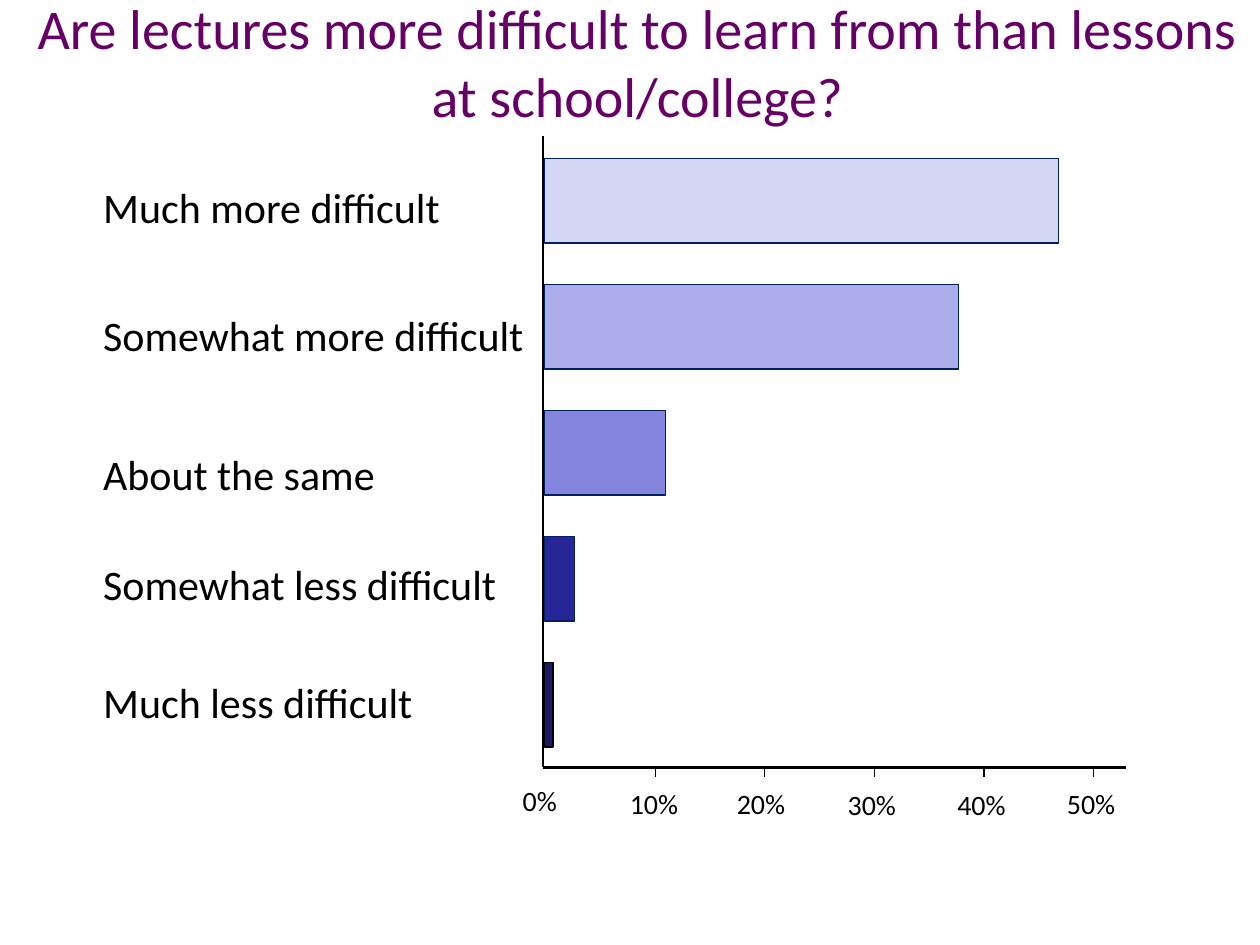
"""Build a slide with a horizontal bar diagram of survey answers on lecture difficulty."""
from dataclasses import dataclass

from lxml.etree import SubElement
from pptx import Presentation
from pptx.dml.color import RGBColor
from pptx.enum.shapes import MSO_CONNECTOR, MSO_SHAPE
from pptx.enum.text import MSO_ANCHOR, PP_ALIGN
from pptx.oxml.ns import qn
from pptx.util import Inches, Pt


@dataclass(frozen=True)
class Theme:
    font: str = "Calibri"
    title_color: str = "660066"
    ink: str = "000000"
    bar_line: str = "002060"
    title_size: int = 32
    label_size: int = 24
    tick_size: int = 16
    axis_width: float = 1.5
    thin_width: float = 0.75


theme = Theme()


def add_text(text, left, top, width, height, size, color=theme.ink,
             align=PP_ALIGN.LEFT, anchor=MSO_ANCHOR.TOP):
    box = slide.shapes.add_textbox(Inches(left), Inches(top), Inches(width), Inches(height))
    frame = box.text_frame
    frame.word_wrap = True
    frame.vertical_anchor = anchor
    paragraph = frame.paragraphs[0]
    paragraph.text = text
    paragraph.alignment = align
    paragraph.font.name = theme.font
    paragraph.font.size = Pt(size)
    paragraph.font.color.rgb = RGBColor.from_string(color)


def add_line(start_x, start_y, end_x, end_y, width):
    line = slide.shapes.add_connector(MSO_CONNECTOR.STRAIGHT, Inches(start_x), Inches(start_y),
                                      Inches(end_x), Inches(end_y))
    line.line.color.rgb = RGBColor.from_string(theme.ink)
    line.line.width = Pt(width)
    SubElement(line._element.spPr, qn("a:effectLst"))


presentation = Presentation()
presentation.slide_width = Inches(10)
presentation.slide_height = Inches(7.5)
slide = presentation.slides.add_slide(presentation.slide_layouts[6])

add_text("Are lectures more difficult to learn from than lessons at school/college?",
         0.12, 0.13, 9.88, 0.71, theme.title_size, theme.title_color,
         PP_ALIGN.CENTER, MSO_ANCHOR.MIDDLE)

axis_left, axis_top, axis_right, axis_bottom = 4.31, 1.08, 8.94, 6.09
add_line(axis_left, axis_top, axis_left, axis_bottom, theme.axis_width)
add_line(axis_left, axis_bottom, axis_right, axis_bottom, theme.axis_width)

answers = [
    ("Much more difficult", 1.39, 2.91, 4.08, "D6D6F5", theme.bar_line),
    ("Somewhat more difficult", 2.41, 3.56, 3.29, "ADADEB", theme.bar_line),
    ("About the same", 3.51, 2.52, 0.96, "8585E0", theme.bar_line),
    ("Somewhat less difficult", 4.38, 3.46, 0.24, "262699", theme.bar_line),
    ("Much less difficult", 5.32, 2.91, 0.07, "191966", theme.ink),
]
for row, (label, label_top, label_width, bar_length, fill, outline) in enumerate(answers):
    add_text(label, 0.72, label_top, label_width, 0.5, theme.label_size)
    bar = slide.shapes.add_shape(MSO_SHAPE.RECTANGLE, Inches(4.32), Inches(1.26 + row),
                                 Inches(bar_length), Inches(0.67))
    bar.shadow.inherit = False
    bar.fill.solid()
    bar.fill.fore_color.rgb = RGBColor.from_string(fill)
    bar.line.color.rgb = RGBColor.from_string(outline)
    bar.line.width = Pt(theme.thin_width)

tick_labels = [(4.05, 6.17), (4.9, 6.19), (5.75, 6.19), (6.63, 6.2), (7.5, 6.2), (8.37, 6.19)]
for step, (left, top) in enumerate(tick_labels):
    add_text(f"{step * 10}%", left, top, 0.63, 0.37, theme.tick_size)
    if step:
        tick_x = 5.2 + 0.87 * (step - 1)
        add_line(tick_x, axis_bottom, tick_x, axis_bottom + 0.08, theme.thin_width)

presentation.save("out.pptx")
